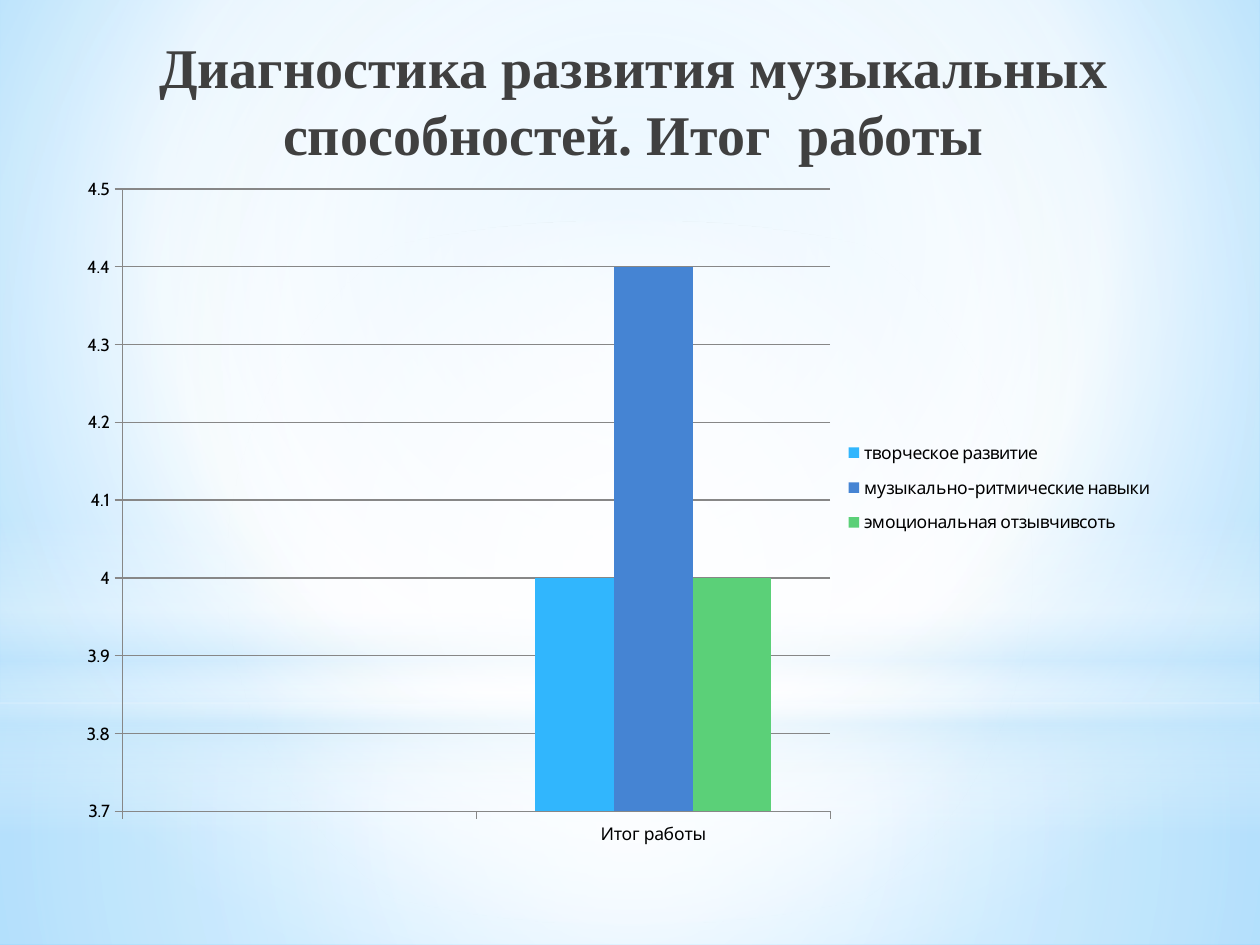
from lxml.etree import SubElement
from pptx import Presentation
from pptx.chart.data import CategoryChartData
from pptx.dml.color import RGBColor
from pptx.enum.chart import XL_CHART_TYPE, XL_LEGEND_POSITION, XL_TICK_MARK
from pptx.enum.shapes import MSO_SHAPE
from pptx.enum.text import MSO_ANCHOR, MSO_AUTO_SIZE, PP_ALIGN
from pptx.oxml.ns import qn
from pptx.util import Inches, Pt

TITLE = "Диагностика развития музыкальных способностей. Итог  работы"
CATEGORIES = ["", "Итог работы"]
SERIES = [
    ("творческое развитие", [None, 4], RGBColor(0x31, 0xB6, 0xFD)),
    ("музыкально-ритмические навыки", [None, 4.4], RGBColor(0x45, 0x84, 0xD3)),
    ("эмоциональная отзывчивсоть", [None, 4], RGBColor(0x5B, 0xD0, 0x78)),
]
# Left, top, width, height in inches; plot and legend are inside the chart
CHART_BOX = (0.51, 1.31, 8.82, 5.51)
PLOT_BOX = (0.46, 0.19, 5.62, 4.94)
LEGEND_BOX = (6.07, 2.09, 2.7, 0.94)

TITLE_COLOR = RGBColor(0x40, 0x40, 0x40)
TEXT_COLOR = RGBColor(0, 0, 0)
LINE_COLOR = RGBColor(0x87, 0x87, 0x87)
WHITE = RGBColor(0xFF, 0xFF, 0xFF)
PALE = RGBColor(0xC6, 0xE7, 0xFC)
SKY = RGBColor(0xB0, 0xE0, 0xFF)
DEEP_SKY = RGBColor(0x6B, 0xC5, 0xFF)

# Gradient stops: position %, colour, opacity %
BACKGROUND = [(0, SKY, 100), (60, WHITE, 100), (100, DEEP_SKY, 100)]
BACKGROUND_FOCUS = (20, 10, 20, 60)
CENTER = (50, 50, 50, 50)
# Shape, top, height, stops, focus (None for a vertical gradient)
GLOWS = [
    (MSO_SHAPE.RECTANGLE, 5.58, 1.92,
     [(0, WHITE, 91), (37, WHITE, 76), (100, PALE, 79)], CENTER),
    (MSO_SHAPE.RECTANGLE, 0, 5.58,
     [(0, WHITE, 89), (48, WHITE, 62), (100, PALE, 79)], CENTER),
    (MSO_SHAPE.RECTANGLE, 4.12, 2.5,
     [(0, WHITE, 0), (29, WHITE, 30), (45, PALE, 40), (55, WHITE, 26),
      (65, PALE, 60), (100, WHITE, 0)], None),
    (MSO_SHAPE.OVAL, 1.75, 5.58, [(0, WHITE, 100), (56, WHITE, 0)], CENTER),
]


def set_gradient(fill, properties, stops, focus):
    """Fill with a circular gradient around focus, or a vertical one."""
    fill.gradient()
    gradient = properties.find(qn("a:gradFill"))
    for child in list(gradient):
        gradient.remove(child)
    stop_list = SubElement(gradient, qn("a:gsLst"))
    for position, color, opacity in stops:
        stop = SubElement(stop_list, qn("a:gs"), pos=str(position * 1000))
        paint = SubElement(stop, qn("a:srgbClr"), val=str(color))
        if opacity < 100:
            SubElement(paint, qn("a:alpha"), val=str(opacity * 1000))
    if focus:
        shade = SubElement(gradient, qn("a:path"), path="circle")
        sides = {side: str(value * 1000) for side, value in zip("ltrb", focus)}
        SubElement(shade, qn("a:fillToRect"), **sides)
    else:
        SubElement(gradient, qn("a:lin"), ang="5400000", scaled="1")


def add_glows(page, width):
    for kind, top, height, stops, focus in GLOWS:
        glow = page.shapes.add_shape(kind, 0, Inches(top), width, Inches(height))
        glow.shadow.inherit = False
        glow.line.fill.background()
        set_gradient(glow.fill, glow._element.spPr, stops, focus)


def write_title(page):
    title = page.shapes.title
    title.left, title.top = Inches(0.2), Inches(0.21)
    title.width, title.height = Inches(9.61), Inches(0.94)
    frame = title.text_frame
    frame.text = TITLE
    frame.word_wrap = True
    frame.auto_size = MSO_AUTO_SIZE.NONE
    frame.vertical_anchor = MSO_ANCHOR.TOP
    para = frame.paragraphs[0]
    para.alignment = PP_ALIGN.CENTER
    para._p.get_or_add_pPr().set("marL", str(Inches(0.05)))
    para.font.name = "Times New Roman"
    para.font.size = Pt(32)
    para.font.bold = True
    para.font.color.rgb = TITLE_COLOR
    # Bring the title in front of the glows
    page.shapes._spTree.append(title._element)


def place_in_chart(part, box, target=None):
    """Fix a chart part at box, given in inches from the chart's corner."""
    layout = part.find(qn("c:layout"))
    if layout is None:
        layout = SubElement(part, qn("c:layout"))
        position = part.find(qn("c:legendPos"))
        if position is None:
            part.insert(0, layout)
        else:
            position.addnext(layout)
    manual = SubElement(layout, qn("c:manualLayout"))
    if target:
        SubElement(manual, qn("c:layoutTarget"), val=target)
    for side in "xy":
        SubElement(manual, qn(f"c:{side}Mode"), val="edge")
    for key, length, whole in zip("xywh", box, CHART_BOX[2:] * 2):
        SubElement(manual, qn(f"c:{key}"), val=str(length / whole))


def add_results_chart(page):
    data = CategoryChartData()
    data.categories = CATEGORIES
    for name, values, _ in SERIES:
        data.add_series(name, values)
    chart = page.shapes.add_chart(
        XL_CHART_TYPE.COLUMN_CLUSTERED, *map(Inches, CHART_BOX), data).chart
    chart.has_title = False
    chart.font.name = "Cabin"
    chart.font.size = Pt(10)
    chart.font.color.rgb = TEXT_COLOR
    chart.has_legend = True
    chart.legend.position = XL_LEGEND_POSITION.RIGHT
    chart.legend.include_in_layout = False
    place_in_chart(chart.legend._element, LEGEND_BOX)
    place_in_chart(chart._chartSpace.chart.plotArea, PLOT_BOX, "inner")

    plot = chart.plots[0]
    plot.gap_width = 150
    plot.overlap = 0
    plot.vary_by_categories = False
    for series, (_, _, color) in zip(plot.series, SERIES):
        series.format.fill.solid()
        series.format.fill.fore_color.rgb = color

    value_axis = chart.value_axis
    value_axis.minimum_scale, value_axis.maximum_scale = 3.7, 4.5
    value_axis.major_unit = 0.1
    value_axis.has_major_gridlines = True
    for axis in (chart.category_axis, value_axis):
        axis.major_tick_mark = XL_TICK_MARK.OUTSIDE
        axis.tick_labels.number_format = "General"
        axis.tick_labels.number_format_is_linked = False
    for lines in (chart.category_axis, value_axis, value_axis.major_gridlines):
        lines.format.line.color.rgb = LINE_COLOR
        lines.format.line.width = Pt(0.75)


def main():
    deck = Presentation()
    deck.slide_width, deck.slide_height = Inches(10), Inches(7.5)
    page = deck.slides.add_slide(deck.slide_layouts[5])
    fill = page.background.fill
    background = page._element.find(".//" + qn("p:bgPr"))
    set_gradient(fill, background, BACKGROUND, BACKGROUND_FOCUS)
    add_glows(page, deck.slide_width)
    write_title(page)
    add_results_chart(page)
    deck.save("out.pptx")


if __name__ == "__main__":
    main()
